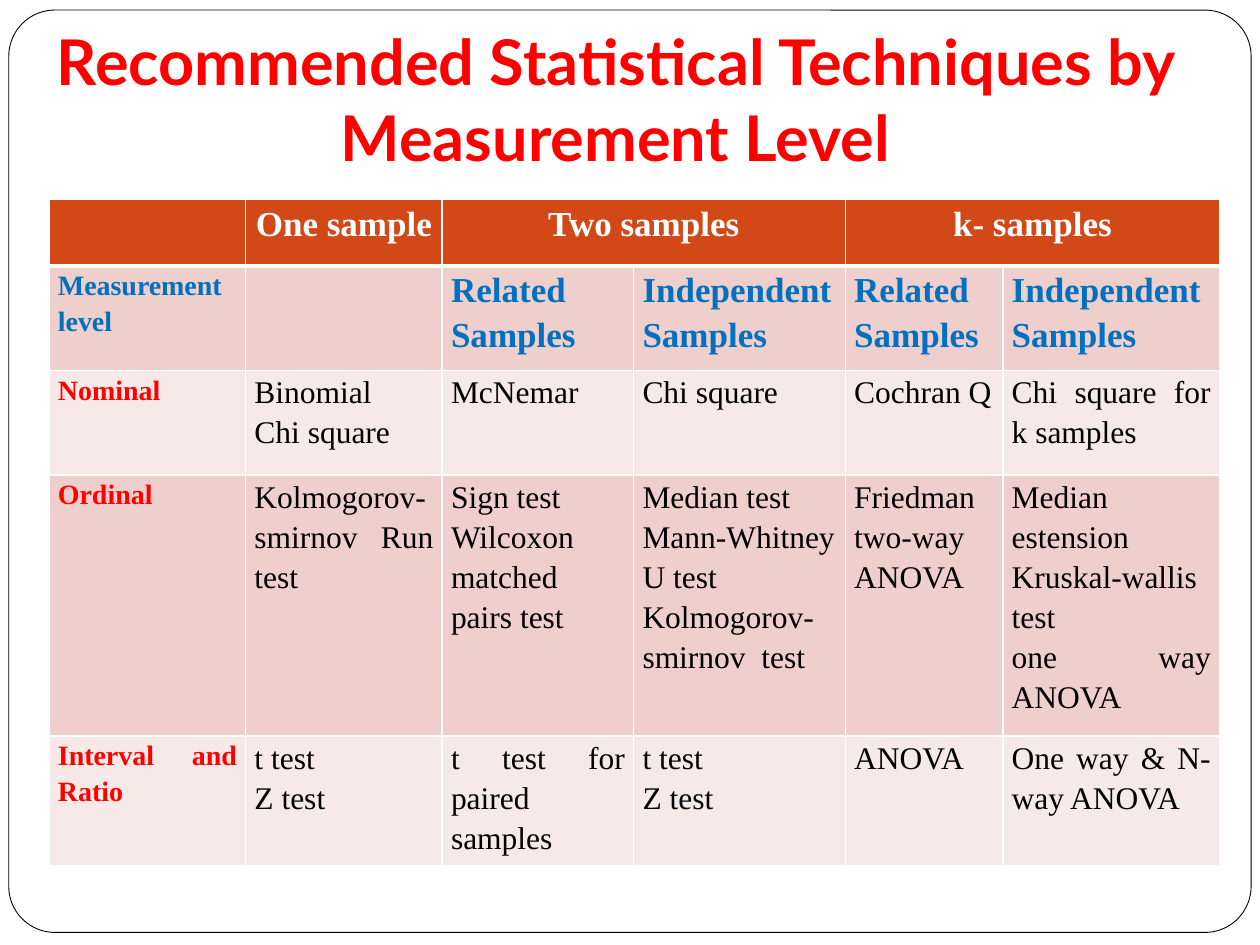
from lxml import etree
from pptx import Presentation
from pptx.dml.color import RGBColor
from pptx.enum.shapes import MSO_SHAPE
from pptx.enum.text import MSO_ANCHOR, PP_ALIGN
from pptx.oxml.ns import qn
from pptx.util import Inches, Pt

ROUND = MSO_SHAPE.ROUNDED_RECTANGLE
BOTTOM = MSO_ANCHOR.BOTTOM
CENTER = PP_ALIGN.CENTER
JUSTIFY = PP_ALIGN.JUSTIFY

WHITE = RGBColor(0xFF, 0xFF, 0xFF)
BLACK = RGBColor(0x00, 0x00, 0x00)
RED = RGBColor(0xFF, 0x00, 0x00)
BLUE = RGBColor(0x00, 0x70, 0xC0)
RUST = RGBColor(0xD3, 0x48, 0x17)
ROSE = RGBColor(0xEF, 0xCF, 0xCC)
PALE = RGBColor(0xF7, 0xE9, 0xE8)

HEAD = {"size": Pt(20), "bold": True, "color": WHITE}
GROUP = {"size": Pt(20), "bold": True, "color": BLUE}
CORNER = {"size": Pt(16), "bold": True, "color": BLUE}
LEVEL = {"size": Pt(16), "bold": True, "color": RED}
BODY = {"size": Pt(18), "bold": False, "color": BLACK}
TITLE = {"size": Pt(36), "bold": True, "color": RED}

COLS = [1.56, 1.56, 1.52, 1.68, 1.25, 1.72]
ROWS = [0.53, 0.83, 0.83, 2.07, 0.83]
FILLS = [RUST, ROSE, PALE, ROSE, PALE]
TESTS = [
    ["", "One sample", "Two samples", "", "k- samples", ""],
    ["Measurement level", "", "Related Samples", "Independent Samples",
     "Related Samples", "Independent Samples"],
    ["Nominal", "Binomial\nChi square", "McNemar", "Chi square",
     "Cochran Q", "Chi square for k samples"],
    ["Ordinal", "Kolmogorov-smirnov Run test",
     "Sign test\nWilcoxon matched pairs test",
     "Median test\nMann-Whitney U test\nKolmogorov-smirnov  test",
     "Friedman two-way ANOVA",
     "Median estension Kruskal-wallis test\none way ANOVA"],
    ["Interval and Ratio", "t test\nZ test", "t test for paired samples",
     "t test\nZ test", "ANOVA", "One way & N-way ANOVA"],
]


def style(font, name, look):
    font.name = name
    for key, value in look.items():
        if key == "color":
            font.color.rgb = value
        else:
            setattr(font, key, value)


def border(cell, sides):
    props = cell._tc.get_or_add_tcPr()
    for spot, (side, width) in enumerate(sides.items()):
        line = etree.Element(qn(f"a:{side}"), w=str(Pt(width)))
        fill = etree.SubElement(line, qn("a:solidFill"))
        etree.SubElement(fill, qn("a:srgbClr"), val=str(WHITE))
        props.insert(spot, line)


deck = Presentation()
deck.slide_width = Inches(10)
deck.slide_height = Inches(7.5)
slide = deck.slides.add_slide(deck.slide_layouts[6])

frame = slide.shapes.add_shape(
    ROUND, Inches(0.07), Inches(0.08), Inches(9.86), Inches(7.32))
frame.adjustments[0] = 0.05
frame.shadow.inherit = False
frame.fill.solid()
frame.fill.fore_color.rgb = WHITE
frame.line.color.rgb = BLACK
frame.line.width = Pt(0.5)

title = slide.shapes.add_textbox(
    Inches(0), Inches(0.3), Inches(9.77), Inches(1.18)).text_frame
title.word_wrap = True
title.vertical_anchor = BOTTOM
title.margin_bottom = Inches(0.1)
title.text = "Recommended Statistical Techniques by Measurement Level"
title.paragraphs[0].alignment = CENTER
style(title.paragraphs[0].runs[0].font, "Lato", TITLE)

table = slide.shapes.add_table(
    len(ROWS), len(COLS), Inches(0.39), Inches(1.58),
    Inches(sum(COLS)), Inches(sum(ROWS))).table
for col, width in zip(table.columns, COLS):
    col.width = Inches(width)
for row, height in zip(table.rows, ROWS):
    row.height = Inches(height)
for left in (2, 4):
    table.cell(0, left).merge(table.cell(0, left + 1))

for r, texts in enumerate(TESTS):
    for c, text in enumerate(texts):
        cell = table.cell(r, c)
        cell.fill.solid()
        cell.fill.fore_color.rgb = FILLS[r]
        border(cell, {"lnL": 1, "lnR": 1, "lnT": 3 if r == 1 else 1,
                      "lnB": 3 if r == 0 else 1})
        if not text:
            continue
        cell.margin_left = cell.margin_right = Inches(0.07)
        cell.margin_top = cell.margin_bottom = 0
        if r == 0:
            look = HEAD
        elif r == 1:
            look = GROUP if c else CORNER
        else:
            look = BODY if c else LEVEL
        cell.text = text
        for para in cell.text_frame.paragraphs:
            para.alignment = JUSTIFY if r else CENTER
            para.line_spacing = 1.15
            style(para.runs[0].font, "Times New Roman", look)

deck.save("out.pptx")
